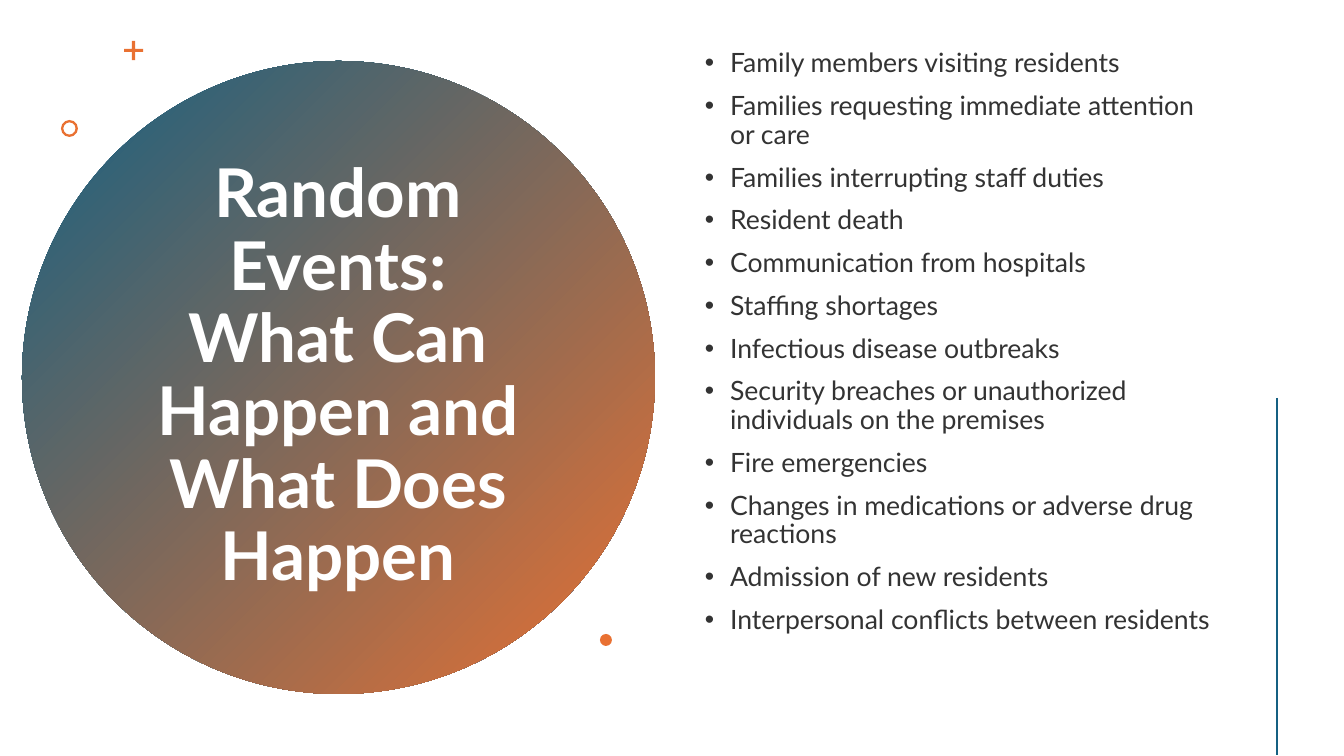
from dataclasses import dataclass

from lxml.etree import SubElement
from pptx import Presentation
from pptx.dml.color import RGBColor
from pptx.enum.shapes import MSO_CONNECTOR, MSO_SHAPE
from pptx.enum.text import MSO_ANCHOR, MSO_AUTO_SIZE, PP_ALIGN
from pptx.oxml.ns import qn
from pptx.shapes.autoshape import Shape
from pptx.slide import Slide
from pptx.text.text import Font
from pptx.util import Emu, Inches, Pt

EMU_PER_PX = 914400 / 100.8
FONT_NAME = "Lato"
COLORS = {
    "blue": "156082",
    "orange": "E97132",
    "title": "FFFFFF",
    "body": "333333",
}

TITLE = "Random Events: What Can Happen and What Does Happen"
EVENTS = [
    "Family members visiting residents",
    "Families requesting immediate attention or care",
    "Families interrupting staff duties",
    "Resident death",
    "Communication from hospitals",
    "Staffing shortages",
    "Infectious disease outbreaks",
    "Security breaches or unauthorized individuals on the premises",
    "Fire emergencies",
    "Changes in medications or adverse drug reactions",
    "Admission of new residents",
    "Interpersonal conflicts between residents",
]


@dataclass(frozen=True)
class Ornament:
    kind: MSO_SHAPE
    left: int
    top: int
    size: int
    adjustment: float | None = None


CIRCLE = Ornament(MSO_SHAPE.OVAL, 22, 61, 633)
ACCENTS = [
    Ornament(MSO_SHAPE.CROSS, 124, 41, 19, 0.42),
    Ornament(MSO_SHAPE.DONUT, 61, 120, 17, 0.14),
    Ornament(MSO_SHAPE.OVAL, 600, 634, 12),
]


def px(length: int) -> Emu:
    return Emu(round(length * EMU_PER_PX))


def color(name: str) -> RGBColor:
    return RGBColor.from_string(COLORS[name])


def style_font(font: Font, size: int, color_name: str, bold: bool = False) -> None:
    font.name = FONT_NAME
    font.size = Pt(size)
    font.bold = bold
    font.color.rgb = color(color_name)


def add_ornament(slide: Slide, ornament: Ornament) -> Shape:
    shape = slide.shapes.add_shape(
        ornament.kind, px(ornament.left), px(ornament.top),
        px(ornament.size), px(ornament.size),
    )
    if ornament.adjustment is not None:
        shape.adjustments[0] = ornament.adjustment
    shape.shadow.inherit = False
    shape.line.fill.background()
    shape.fill.solid()
    shape.fill.fore_color.rgb = color("orange")
    return shape


def add_circle(slide: Slide) -> None:
    """Add the gradient disc behind the title."""
    circle = add_ornament(slide, CIRCLE)
    circle.fill.gradient()
    circle.fill.gradient_angle = 315
    for stop, name in zip(circle.fill.gradient_stops, ("blue", "orange")):
        stop.color.rgb = color(name)
    slide.shapes._spTree.insert(2, circle._element)


def place_title(slide: Slide) -> None:
    title = slide.shapes.title
    title.left, title.top, title.width, title.height = map(px, (137, 142, 402, 471))
    frame = title.text_frame
    frame.text = TITLE
    frame.word_wrap = True
    frame.auto_size = MSO_AUTO_SIZE.NONE
    frame.vertical_anchor = MSO_ANCHOR.MIDDLE
    paragraph = frame.paragraphs[0]
    paragraph.alignment = PP_ALIGN.CENTER
    paragraph.line_spacing = 0.9
    style_font(paragraph.runs[0].font, 48, "title", bold=True)


def add_event_list(slide: Slide) -> None:
    frame = slide.shapes.add_textbox(px(695), px(45), px(526), px(643)).text_frame
    frame.word_wrap = True
    frame.vertical_anchor = MSO_ANCHOR.TOP
    for index, event in enumerate(EVENTS):
        paragraph = frame.add_paragraph() if index else frame.paragraphs[0]
        paragraph.text = event
        paragraph.line_spacing = 0.9
        paragraph.space_before = Pt(10 if index else 0)
        properties = paragraph._p.get_or_add_pPr()
        properties.set("marL", str(Inches(0.25)))
        properties.set("indent", str(-Inches(0.25)))
        SubElement(properties, qn("a:buFont"), typeface="Arial")
        SubElement(properties, qn("a:buChar"), char="•")
        style_font(paragraph.runs[0].font, 19, "body")


def add_side_rule(slide: Slide) -> None:
    rule = slide.shapes.add_connector(
        MSO_CONNECTOR.STRAIGHT, px(1277), px(398), px(1277), px(755)
    )
    rule.line.color.rgb = color("blue")
    rule.line.width = Pt(2)
    SubElement(rule._element.spPr, qn("a:effectLst"))


def main() -> None:
    presentation = Presentation()
    presentation.slide_width = px(1344)
    presentation.slide_height = px(756)
    slide = presentation.slides.add_slide(presentation.slide_layouts.get_by_name("Title Only"))
    add_circle(slide)
    place_title(slide)
    for accent in ACCENTS:
        add_ornament(slide, accent)
    add_event_list(slide)
    add_side_rule(slide)
    presentation.save("out.pptx")


if __name__ == "__main__":
    main()
